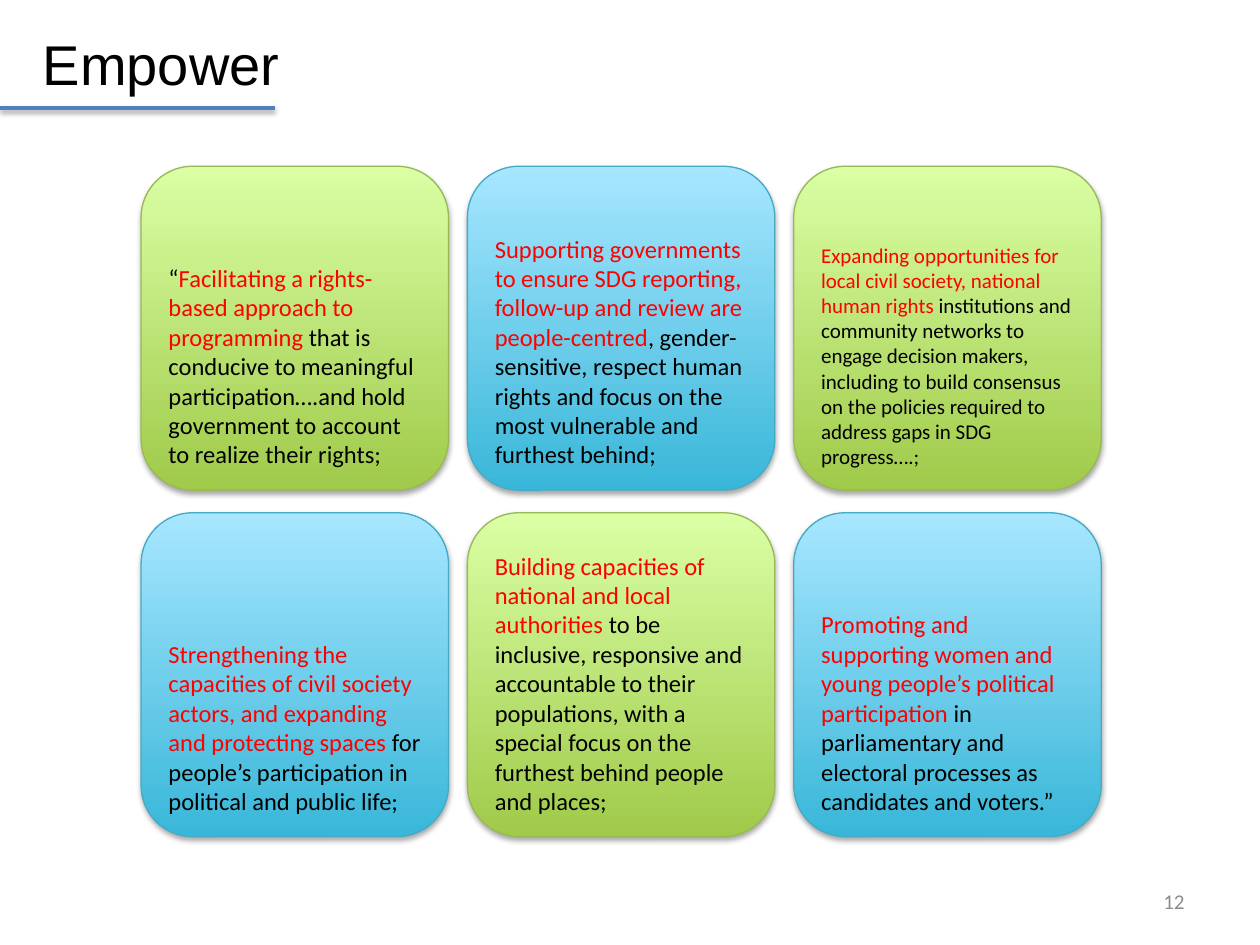
from lxml import etree
from pptx import Presentation
from pptx.dml.color import RGBColor
from pptx.enum.shapes import MSO_CONNECTOR, MSO_SHAPE
from pptx.enum.text import MSO_ANCHOR, PP_ALIGN
from pptx.oxml.ns import qn
from pptx.util import Inches, Pt

ROUNDED = MSO_SHAPE.ROUNDED_RECTANGLE
STRAIGHT = MSO_CONNECTOR.STRAIGHT
LEFT, RIGHT = PP_ALIGN.LEFT, PP_ALIGN.RIGHT
MIDDLE, BOTTOM = MSO_ANCHOR.MIDDLE, MSO_ANCHOR.BOTTOM

COLORS = {
    "text": "000000", "accent": "FF0000", "number": "8C8C8C",
    "rule": "4F81BD", "shadow": "000000",
    "green_dark": "A0CA4A", "green_light": "DAFFA5", "green_line": "98B955",
    "blue_dark": "39B7D8", "blue_light": "A7E6FF", "blue_line": "46AAC5",
}

CARDS = [
    (14, [("“", "text"),
          ("Facilitating a rights-based approach to programming ", "accent"),
          ("that is conducive to meaningful participation….and hold government "
           "to account to realize their rights;", "text")]),
    (14, [("Supporting governments to ensure SDG reporting, follow-up and "
           "review are people-centred", "accent"),
          (", gender-sensitive, respect human rights and focus on the most "
           "vulnerable and furthest behind;", "text")]),
    (12, [("Expanding opportunities for local civil society, national human "
           "rights ", "accent"),
          ("institutions and community networks to engage decision makers, "
           "including to build consensus on the policies required to address "
           "gaps in SDG progress….;", "text")]),
    (14, [("Strengthening the capacities of civil society actors, and "
           "expanding and protecting spaces ", "accent"),
          ("for people’s participation in political and public life;", "text")]),
    (14, [("Building capacities of national and local authorities ", "accent"),
          ("to be inclusive, responsive and accountable to their populations, "
           "with a special focus on the furthest behind people and places;",
           "text")]),
    (14, [("Promoting and supporting women and young people’s political "
           "participation ", "accent"),
          ("in parliamentary and electoral processes as candidates and "
           "voters.”", "text")]),
]


def rgb(name):
    """Return the named colour."""
    return RGBColor.from_string(COLORS[name])


def add_run(p, text, size, color, font="Calibri"):
    """Append a formatted run to a paragraph."""
    r = p.add_run()
    r.text = text
    r.font.size = Pt(size)
    r.font.name = font
    r.font.color.rgb = rgb(color)


def add_shadow(sp, alpha, dist):
    """Give a shape or connector a soft shadow that falls downwards."""
    sp_pr = sp._element.spPr
    effects = etree.SubElement(sp_pr, qn("a:effectLst"))
    shadow = etree.SubElement(
        effects, qn("a:outerShdw"), blurRad=str(Pt(3.1)), dist=str(Pt(dist)),
        dir="5400000", rotWithShape="0")
    color = etree.SubElement(shadow, qn("a:srgbClr"), val=COLORS["shadow"])
    etree.SubElement(color, qn("a:alpha"), val=str(alpha * 1000))


def add_title(s, text):
    """Place the slide title at the top left."""
    sp = s.shapes.title
    sp.left, sp.top, sp.width, sp.height = map(Inches, (0.24, 0.18, 2.1, 0.64))
    tf = sp.text_frame
    tf.word_wrap = False
    p = tf.paragraphs[0]
    p.alignment = LEFT
    add_run(p, text, 32, "text", "Arial")


def add_rule(s):
    """Draw the line below the title."""
    y = Inches(0.86)
    line = s.shapes.add_connector(STRAIGHT, Inches(2.18), y, 0, y)
    line.line.color.rgb = rgb("rule")
    line.line.width = Pt(2.25)
    add_shadow(line, 38, 1.6)


def add_card(s, x, y, hue, size, runs):
    """Add a rounded card with a gradient and bottom-aligned text."""
    sp = s.shapes.add_shape(ROUNDED, Inches(x), Inches(y), Inches(2.44), Inches(2.57))
    sp.fill.gradient()
    sp.fill.gradient_angle = 90
    for stop, shade in zip(sp.fill.gradient_stops, ("dark", "light")):
        stop.color.rgb = rgb(f"{hue}_{shade}")
    sp.line.color.rgb = rgb(f"{hue}_line")
    sp.line.width = Pt(0.75)
    add_shadow(sp, 35, 1.8)
    tf = sp.text_frame
    tf.word_wrap = True
    tf.vertical_anchor = BOTTOM
    p = tf.paragraphs[0]
    p.alignment = LEFT
    for text, color in runs:
        add_run(p, text, size, color)


def add_number(s, text):
    """Add the slide number at the bottom right."""
    sp = s.shapes.add_textbox(Inches(7.17), Inches(6.95), Inches(2.33), Inches(0.4))
    tf = sp.text_frame
    tf.word_wrap = True
    tf.vertical_anchor = MIDDLE
    p = tf.paragraphs[0]
    p.alignment = RIGHT
    add_run(p, text, 12, "number")


def main():
    """Build and save the slide."""
    prs = Presentation()
    prs.slide_width, prs.slide_height = Inches(10), Inches(7.5)
    s = prs.slides.add_slide(prs.slide_layouts[5])
    for i, (size, runs) in enumerate(CARDS):
        row, col = divmod(i, 3)
        hue = ("green", "blue")[i % 2]
        add_card(s, 1.12 + 2.59 * col, 1.32 + 2.75 * row, hue, size, runs)
    add_title(s, "Empower")
    add_rule(s)
    add_number(s, "12")
    prs.save("out.pptx")


if __name__ == "__main__":
    main()
